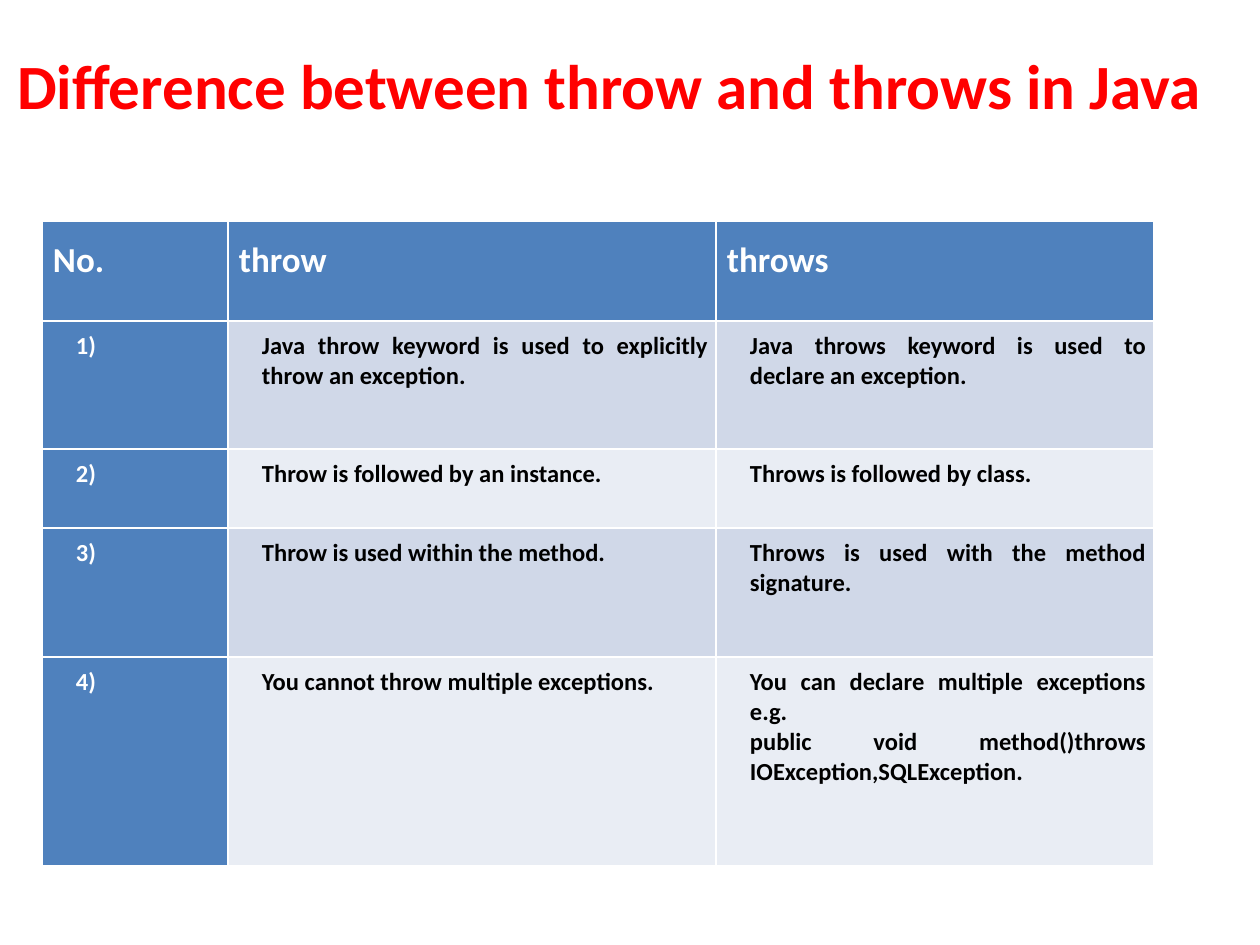
import pptx
import pptx.util
import pptx.dml.color
import pptx.enum.text
import pptx.oxml

PX = 914400 / 126
ALIGN = pptx.enum.text.PP_ALIGN
COLORS = {
    "title": "FF0000",
    "accent": "4F81BD",
    "odd": "D0D8E8",
    "even": "E9EDF4",
    "light": "FFFFFF",
    "dark": "000000",
}


def px(length):
    return pptx.util.Emu(round(length * PX))


def write(frame, text, size, color, align=ALIGN.LEFT, line=None, after=0, indent=0):
    para = frame.paragraphs[0]
    para.text = text
    para.alignment = align
    para.line_spacing = line
    para.space_before = pptx.util.Pt(0)
    para.space_after = pptx.util.Pt(after)
    properties = para._p.get_or_add_pPr()
    properties.set("marL", str(px(indent)))
    properties.set("indent", "0")
    for span in para.runs:
        span.font.name = "Calibri"
        span.font.size = pptx.util.Pt(size)
        span.font.bold = True
        span.font.color.rgb = pptx.dml.color.RGBColor.from_string(COLORS[color])


deck = pptx.Presentation()
deck.slide_width = px(1260)
deck.slide_height = px(945)
page = deck.slides.add_slide(deck.slide_layouts[5])

title = page.shapes.title
title.left, title.top, title.width, title.height = px(-5), px(21), px(1229), px(126)
title.text_frame.word_wrap = True
title.text_frame.vertical_anchor = pptx.enum.text.MSO_ANCHOR.MIDDLE
write(title.text_frame, "Difference between throw and throws in Java", size=36,
      color="title", align=ALIGN.CENTER)

rows = [
    ("No.", "throw", "throws"),
    ("1)", "Java throw keyword is used to explicitly throw an exception.",
     "Java throws keyword is used to declare an exception."),
    ("2)", "Throw is followed by an instance.", "Throws is followed by class."),
    ("3)", "Throw is used within the method.",
     "Throws is used with the method signature."),
    ("4)", "You cannot throw multiple exceptions.",
     "You can declare multiple exceptions e.g.\v"
     "public void method()throws IOException,SQLException."),
]
widths = [186, 488, 438]
heights = [100, 128, 79, 129, 209]

table = page.shapes.add_table(len(rows), len(widths), px(42), px(221),
                              px(sum(widths)), px(sum(heights))).table
for column, width in zip(table.columns, widths):
    column.width = px(width)
for row, height in zip(table.rows, heights):
    row.height = px(height)

for row_index, texts in enumerate(rows):
    for column_index, text in enumerate(texts):
        cell = table.cell(row_index, column_index)
        header = row_index == 0
        accent = header or column_index == 0
        cell.margin_left = cell.margin_right = px(11 if header else 8)
        cell.margin_top = cell.margin_bottom = px(15 if header else 10)
        if header:
            write(cell.text_frame, text, size=20, color="light", line=1.07, after=8)
        else:
            write(cell.text_frame, text, size=14, color="light" if accent else "dark",
                  align=ALIGN.JUSTIFY, line=pptx.util.Pt(17.2), after=8, indent=26)
        band = "accent" if accent else "odd" if row_index % 2 else "even"
        properties = cell._tc.get_or_add_tcPr()
        for side in ("lnL", "lnR", "lnT", "lnB"):
            properties.append(pptx.oxml.parse_xml(
                f'<a:{side} xmlns:a="http://schemas.openxmlformats.org/drawingml/2006/main" '
                f'w="12700"><a:solidFill><a:srgbClr val="{COLORS["light"]}"/></a:solidFill>'
                f'</a:{side}>'))
        cell.fill.solid()
        cell.fill.fore_color.rgb = pptx.dml.color.RGBColor.from_string(COLORS[band])

deck.save("out.pptx")
